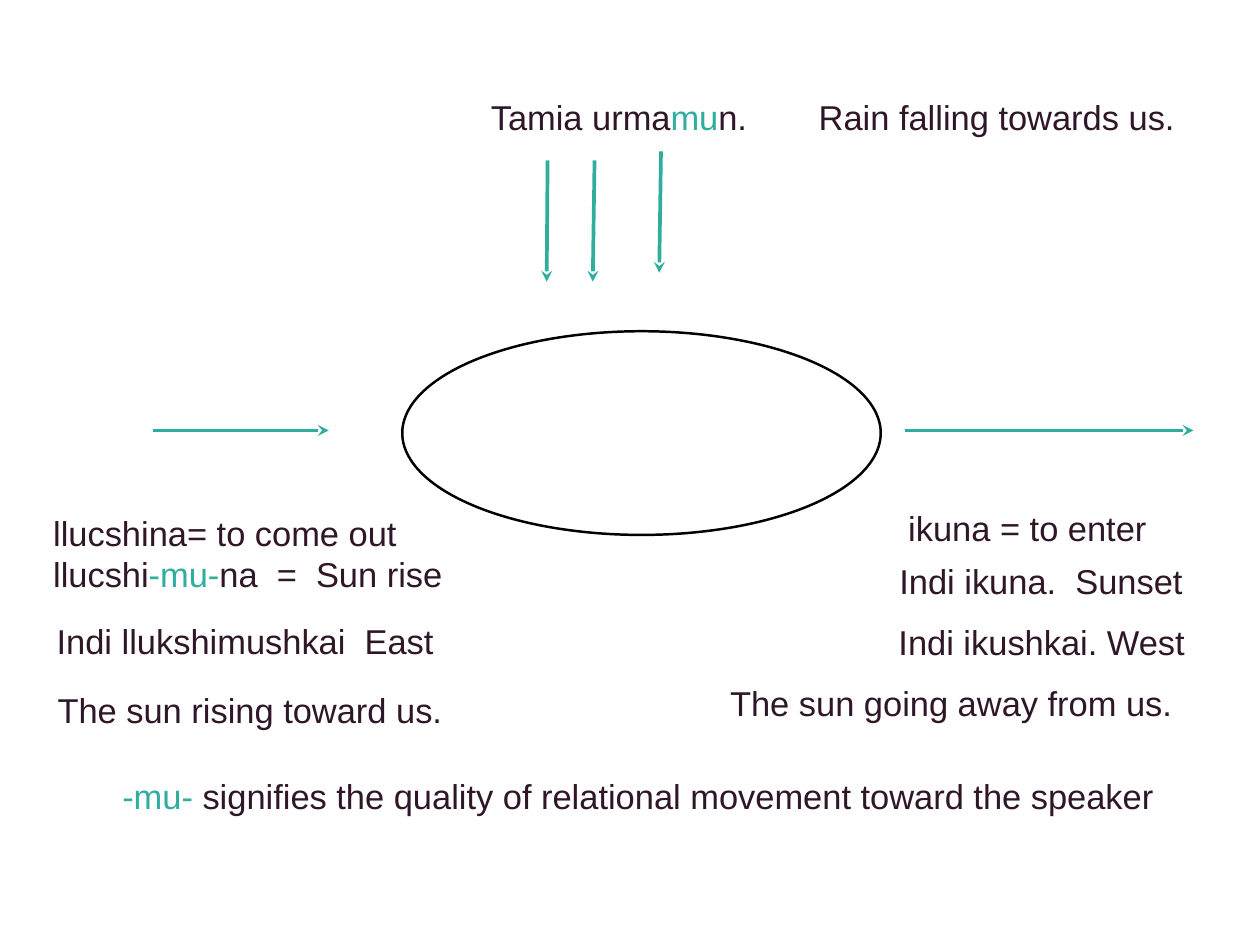
from pptx import Presentation
from pptx.dml.color import RGBColor
from pptx.enum.shapes import MSO_CONNECTOR, MSO_SHAPE
from pptx.enum.text import MSO_ANCHOR
from pptx.oxml.ns import qn
from pptx.util import Inches, Pt
from lxml import etree

STRAIGHT = MSO_CONNECTOR.STRAIGHT
ELLIPSE = MSO_SHAPE.OVAL
MIDDLE = MSO_ANCHOR.MIDDLE

WHITE = RGBColor(0xFF, 0xFF, 0xFF)
BLACK = RGBColor(0x00, 0x00, 0x00)
PLUM = RGBColor(0x2F, 0x17, 0x29)
TEAL = RGBColor(0x2F, 0xAE, 0xA0)

BLANK_LAYOUT = 6
LINE_HEIGHT = 0.54


def write_text(paragraph, text, font="Arial", size=28, color=PLUM, accent=TEAL):
    """Write text; the parts between bars take the accent colour."""
    for index, part in enumerate(text.split("|")):
        if part:
            run = paragraph.add_run()
            run.text = part
            run.font.name = font
            run.font.size = Pt(size)
            run.font.color.rgb = accent if index % 2 else color


class SlideBuilder:
    def __init__(self, slide, margin=0.06, arrow_width=3):
        self.slide = slide
        self.margin = Inches(margin)
        self.arrow_width = Pt(arrow_width)

    def label(self, left, top, width, *lines, height=LINE_HEIGHT):
        box = self.slide.shapes.add_textbox(
            Inches(left), Inches(top), Inches(width), Inches(height))
        frame = box.text_frame
        frame.word_wrap = True
        frame.vertical_anchor = MIDDLE
        frame.margin_left = frame.margin_right = self.margin
        frame.margin_top = frame.margin_bottom = self.margin
        for index, line in enumerate(lines):
            paragraph = frame.add_paragraph() if index else frame.paragraphs[0]
            write_text(paragraph, line)

    def ellipse(self, left, top, width, height):
        shape = self.slide.shapes.add_shape(
            ELLIPSE, Inches(left), Inches(top), Inches(width), Inches(height))
        shape.shadow.inherit = False
        shape.fill.solid()
        shape.fill.fore_color.rgb = WHITE
        shape.line.color.rgb = BLACK
        shape.line.width = Pt(2)

    def arrow(self, start_x, start_y, tip_x, tip_y):
        connector = self.slide.shapes.add_connector(
            STRAIGHT, Inches(start_x), Inches(start_y), Inches(tip_x), Inches(tip_y))
        connector.line.color.rgb = TEAL
        connector.line.width = self.arrow_width
        properties = connector._element.spPr
        line = properties.find(qn("a:ln"))
        etree.SubElement(line, qn("a:tailEnd"), type="stealth")
        etree.SubElement(properties, qn("a:effectLst"))


def main():
    presentation = Presentation()
    presentation.slide_width = Inches(14.22)
    presentation.slide_height = Inches(10.67)
    layout = presentation.slide_layouts[BLANK_LAYOUT]
    builder = SlideBuilder(presentation.slides.add_slide(layout))

    # Speaker's place, with the sun's path on either side
    builder.ellipse(4.54, 3.74, 5.4, 2.3)
    for start, tip in ((1.73, 3.71), (10.21, 13.47)):
        builder.arrow(start, 4.86, tip, 4.86)

    # Rain falling from above
    builder.label(5.48, 1.05, 3.26, "Tamia urma|mu|n.")
    builder.label(9.18, 1.05, 4.22, "Rain falling towards us.")
    for start_x, start_y, tip_x in ((6.18, 1.81, 6.17), (6.71, 1.81, 6.69),
                                    (7.46, 1.71, 7.44)):
        builder.arrow(start_x, start_y, tip_x, start_y + 1.37)

    # Sunrise
    builder.label(0.54, 5.75, 10.07, "llucshina= to come out",
                  "llucshi|-mu-|na  =  Sun rise", height=0.99)
    builder.label(0.58, 6.96, 4.67, "Indi llukshimushkai  East")
    builder.label(0.59, 7.74, 5.43, "The sun rising toward us.")

    # Sunset
    builder.label(10.19, 5.69, 2.92, "ikuna = to enter")
    builder.label(10.09, 6.29, 3.52, "Indi ikuna.  Sunset")
    builder.label(10.08, 6.98, 3.52, "Indi ikushkai. West")
    builder.label(8.18, 7.67, 5.43, "The sun going away from us.")

    # Conclusion
    builder.label(1.32, 8.71, 12.72,
                  "|-mu-| signifies the quality of relational movement toward the speaker")

    presentation.save("out.pptx")


if __name__ == "__main__":
    main()
